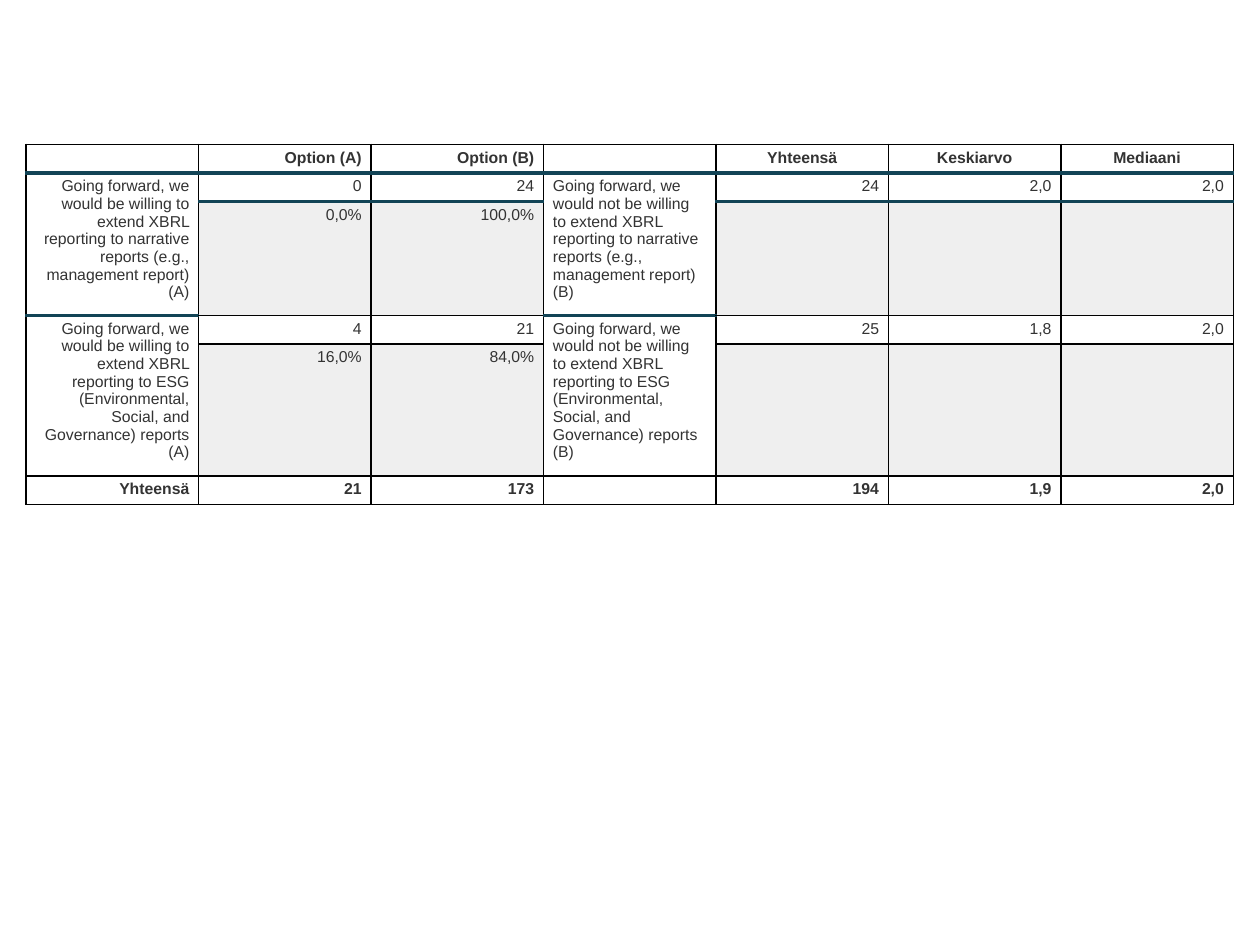
from dataclasses import dataclass

from lxml.etree import SubElement
from pptx import Presentation
from pptx.dml.color import RGBColor
from pptx.enum.text import PP_ALIGN
from pptx.oxml.ns import qn
from pptx.util import Pt

TEXT, SHADE, GRID, RULE = "333333", "EFEFEF", "000000", "124456"
FONT_SIZE = 9
COLUMN_WIDTH = 98.55
ROW_HEIGHTS = [16.3, 16.3, 65, 16.3, 75.5, 16.3]
STATEMENT_COLUMNS = (0, 3)
MARGINS = {"margin_left": Pt(5.4), "margin_right": Pt(5.4),
           "margin_top": Pt(2.7), "margin_bottom": Pt(2.7)}


@dataclass
class Question:
    topic: str
    counts: tuple[str, str]
    shares: tuple[str, str]
    summary: tuple[str, str, str]

    def statement(self, verb: str, option: str) -> str:
        return f"Going forward, we {verb} be willing to extend XBRL reporting to {self.topic} ({option})"

    def rows(self) -> list[list[str]]:
        """The row of counts, then the row of shares."""
        return [
            [self.statement("would", "A"), *self.counts,
             self.statement("would not", "B"), *self.summary],
            ["", *self.shares, "", "", "", ""],
        ]


QUESTIONS = [
    Question("narrative reports (e.g., management report)",
             ("0", "24"), ("0,0%", "100,0%"), ("24", "2,0", "2,0")),
    Question("ESG (Environmental, Social, and Governance) reports",
             ("4", "21"), ("16,0%", "84,0%"), ("25", "1,8", "2,0")),
]
HEADER = ["", "Option (A)", "Option (B)", "", "Yhteensä", "Keskiarvo", "Mediaani"]
TOTALS = ["Yhteensä", "21", "173", "", "194", "1,9", "2,0"]
ROWS = [HEADER, *(row for question in QUESTIONS for row in question.rows()), TOTALS]
SHARE_ROWS = (2, 4)
LAST_ROW = len(ROWS) - 1


def color(value: str) -> RGBColor:
    return RGBColor.from_string(value)


def has_rule_below(row: int, column: int) -> bool:
    """The header and each cell of the first question row end in a heavy rule."""
    if column in STATEMENT_COLUMNS:
        return row in (0, 2)
    return row in (0, 1)


def alignment(row: int, column: int) -> PP_ALIGN:
    if row == 0 and column > 3:
        return PP_ALIGN.CENTER
    return PP_ALIGN.LEFT if column == 3 else PP_ALIGN.RIGHT


def draw_border(cell, side: str, heavy: bool) -> None:
    width, value = (2, RULE) if heavy else (1, GRID)
    line = SubElement(cell._tc.get_or_add_tcPr(), qn(f"a:ln{side}"), w=str(Pt(width)))
    SubElement(SubElement(line, qn("a:solidFill")), qn("a:srgbClr"), val=value)


def draw_cell(cell, row: int, column: int, text: str) -> None:
    draw_border(cell, "L", False)
    draw_border(cell, "R", False)
    draw_border(cell, "T", row > 0 and has_rule_below(row - 1, column))
    # A merged statement takes its lower border from the row it ends in.
    end_row = row + 1 if cell.is_merge_origin else row
    draw_border(cell, "B", has_rule_below(end_row, column))

    if row in SHARE_ROWS and column not in STATEMENT_COLUMNS:
        cell.fill.solid()
        cell.fill.fore_color.rgb = color(SHADE)
    else:
        cell.fill.background()
    for name, value in MARGINS.items():
        setattr(cell, name, value)

    paragraph = cell.text_frame.paragraphs[0]
    paragraph.alignment = alignment(row, column)
    if text:
        run = paragraph.add_run()
        run.text = text
        formats = {"name": "Arial", "size": Pt(FONT_SIZE), "bold": row in (0, LAST_ROW)}
        for name, value in formats.items():
            setattr(run.font, name, value)
        run.font.color.rgb = color(TEXT)
    else:
        SubElement(paragraph._p, qn("a:endParaRPr"), sz=str(FONT_SIZE * 100))


def draw_results(slide) -> None:
    columns = len(HEADER)
    frame = slide.shapes.add_table(len(ROWS), columns, Pt(15), Pt(82.5),
                                   Pt(COLUMN_WIDTH * columns), Pt(sum(ROW_HEIGHTS)))
    table = frame.table
    table.first_row = table.horz_banding = False
    for column in table.columns:
        column.width = Pt(COLUMN_WIDTH)
    for row, height in zip(table.rows, ROW_HEIGHTS):
        row.height = Pt(height)
    for share_row in SHARE_ROWS:
        for column in STATEMENT_COLUMNS:
            table.cell(share_row - 1, column).merge(table.cell(share_row, column))
    for row, texts in enumerate(ROWS):
        for column, text in enumerate(texts):
            draw_cell(table.cell(row, column), row, column, text)


def main() -> None:
    presentation = Presentation()
    presentation.slide_width, presentation.slide_height = Pt(720), Pt(540)
    slide = presentation.slides.add_slide(presentation.slide_layouts[6])
    draw_results(slide)
    presentation.save("out.pptx")


if __name__ == "__main__":
    main()
